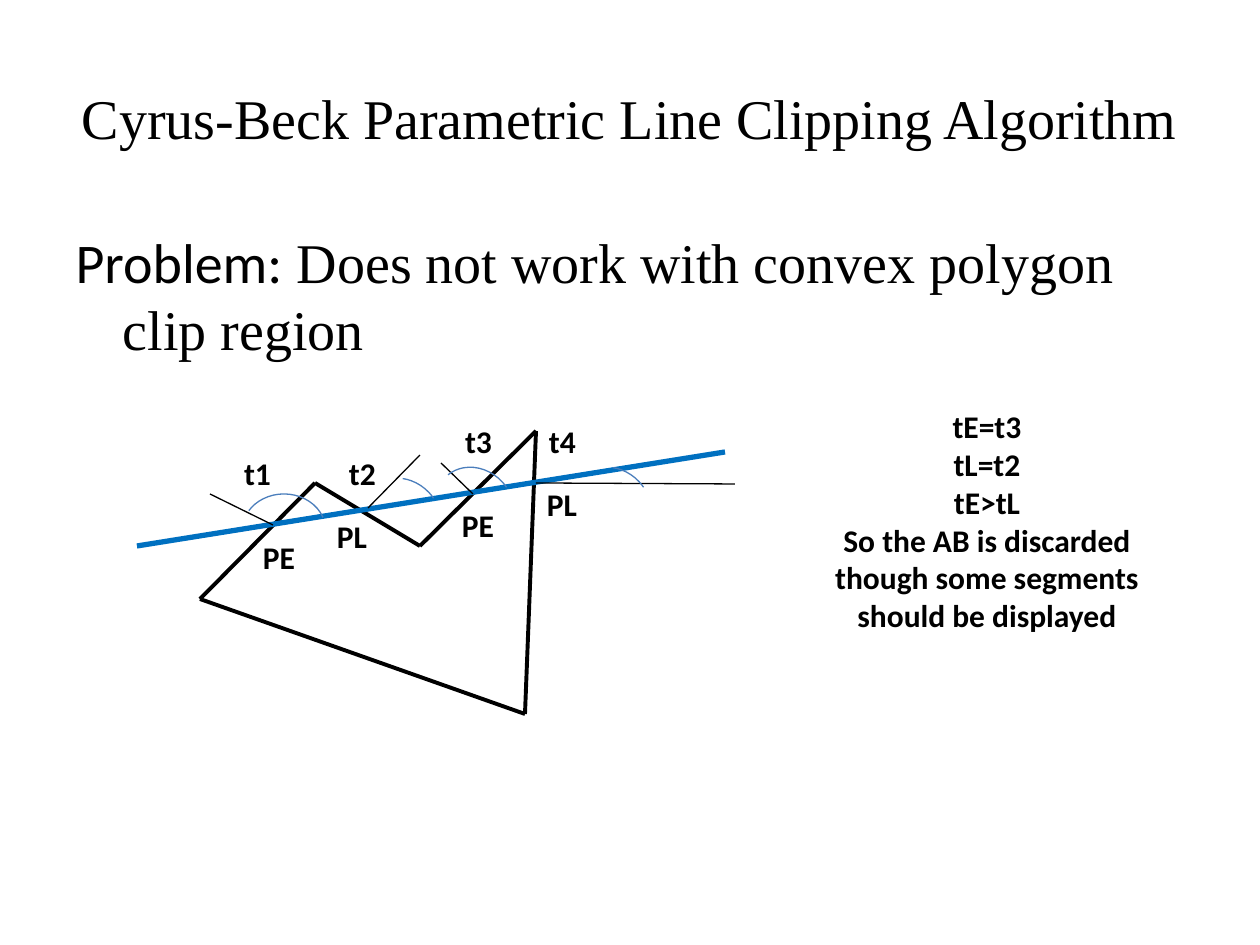
from dataclasses import dataclass
from itertools import pairwise

from lxml.etree import SubElement
from pptx import Presentation
from pptx.dml.color import RGBColor as RGB
from pptx.enum.shapes import MSO_CONNECTOR as Connector, MSO_SHAPE as Shape
from pptx.enum.text import MSO_ANCHOR as Anchor, MSO_AUTO_SIZE as AutoSize, PP_ALIGN as Align
from pptx.oxml.ns import qn
from pptx.util import Emu, Pt


@dataclass(frozen=True)
class Theme:
    ink: RGB = RGB(0x00, 0x00, 0x00)
    clipped: RGB = RGB(0x00, 0x70, 0xC0)
    angle: RGB = RGB(0x4B, 0x7E, 0xBC)
    serif: str = "Times New Roman"
    sans: str = "Calibri"
    heading_size: int = 32
    label_size: int = 18
    thin: float = 0.75
    edge: float = 2.25
    thick: float = 3


def px(length):
    return Emu(round(length * 914400 / 126))


class ClippingSlide:
    def __init__(self, deck, theme):
        self.theme = theme
        self.slide = deck.slides.add_slide(deck.slide_layouts[1])
        self.shapes = self.slide.shapes

    def style(self, font, name, size, bold=False):
        font.name, font.size, font.bold = name, Pt(size), bold
        font.color.rgb = self.theme.ink

    def place(self, holder, box):
        holder.left, holder.top, holder.width, holder.height = map(px, box)
        holder.text_frame.auto_size = AutoSize.NONE
        return holder.text_frame

    def title(self, text, box):
        frame = self.place(self.shapes.title, box)
        frame.text = text
        frame.vertical_anchor = Anchor.MIDDLE
        heading = frame.paragraphs[0]
        heading.alignment = Align.CENTER
        self.style(heading.font, self.theme.serif, self.theme.heading_size)

    def statement(self, lead, rest, box):
        statement = self.place(self.slide.placeholders[1], box).paragraphs[0]
        SubElement(statement._p.get_or_add_pPr(), qn("a:buNone"))
        for text, face in ((lead, self.theme.sans), (rest, self.theme.serif)):
            run = statement.add_run()
            run.text = text
            self.style(run.font, face, self.theme.heading_size)

    def line(self, start, end, color, weight):
        line = self.shapes.add_connector(Connector.STRAIGHT, *map(px, (*start, *end)))
        line.line.color.rgb = color
        line.line.width = Pt(weight)
        SubElement(line._element.spPr, qn("a:effectLst"))

    def arc(self, corner, degrees, rotation):
        arc = self.shapes.add_shape(Shape.ARC, *map(px, (*corner, 84, 74)))
        arc.shadow.inherit = False
        arc.fill.background()
        arc.line.color.rgb = self.theme.angle
        arc.line.width = Pt(self.theme.thin)
        for index, degree in enumerate(degrees):
            arc.adjustments[index] = degree * 0.6
        arc.rotation = rotation

    def label(self, lines, box):
        frame = self.shapes.add_textbox(*map(px, box)).text_frame
        frame.word_wrap = True
        frame.vertical_anchor = Anchor.MIDDLE
        frame.margin_left = frame.margin_right = px(6)
        frame.margin_top = frame.margin_bottom = 0
        frame.text = "\n".join(lines)
        for paragraph in frame.paragraphs:
            paragraph.alignment = Align.CENTER
            self.style(paragraph.font, self.theme.sans, self.theme.label_size, bold=True)


def main():
    deck = Presentation()
    deck.slide_width, deck.slide_height = px(1260), px(945)
    theme = Theme()
    page = ClippingSlide(deck, theme)

    page.title("Cyrus-Beck Parametric Line Clipping Algorithm", (63, 38, 1134, 158))
    page.statement("Problem:", " Does not work with convex polygon clip region",
                   (63, 221, 1134, 624))

    polygon = [(200, 599), (315, 483), (420, 546), (536, 431), (525, 714)]
    for start, end in pairwise(polygon + polygon[:1]):
        page.line(start, end, theme.ink, theme.edge)
    page.line((137, 546), (725, 452), theme.clipped, theme.thick)

    normals = [
        ((273, 525), (210, 494)),
        ((368, 508), (420, 455)),
        ((473, 494), (441, 463)),
        ((536, 483), (735, 484)),
    ]
    for crossing, tip in normals:
        page.line(crossing, tip, theme.ink, theme.thin)

    angles = [
        ((242, 494), (210, 341), 0),
        ((360, 481), (224, 281), 47),
        ((433, 470), (183, 281), 47),
        ((570, 470), (224, 281), 47),
    ]
    for corner, degrees, rotation in angles:
        page.arc(corner, degrees, rotation)

    crossing_kinds = [("PE", 242, 536), ("PL", 315, 515), ("PE", 441, 504), ("PL", 525, 483)]
    for kind, left, top in crossing_kinds:
        page.label([kind], (left, top, 74, 42))
    parameters = [("t1", 231, 452), ("t2", 336, 452), ("t3", 452, 420), ("t4", 536, 420)]
    for parameter, left, top in parameters:
        page.label([parameter], (left, top, 53, 42))

    page.label(["tE=t3", "tL=t2", "tE>tL",
                "So the AB is discarded though some segments should be displayed"],
               (798, 347, 378, 347))

    deck.save("out.pptx")


if __name__ == "__main__":
    main()
